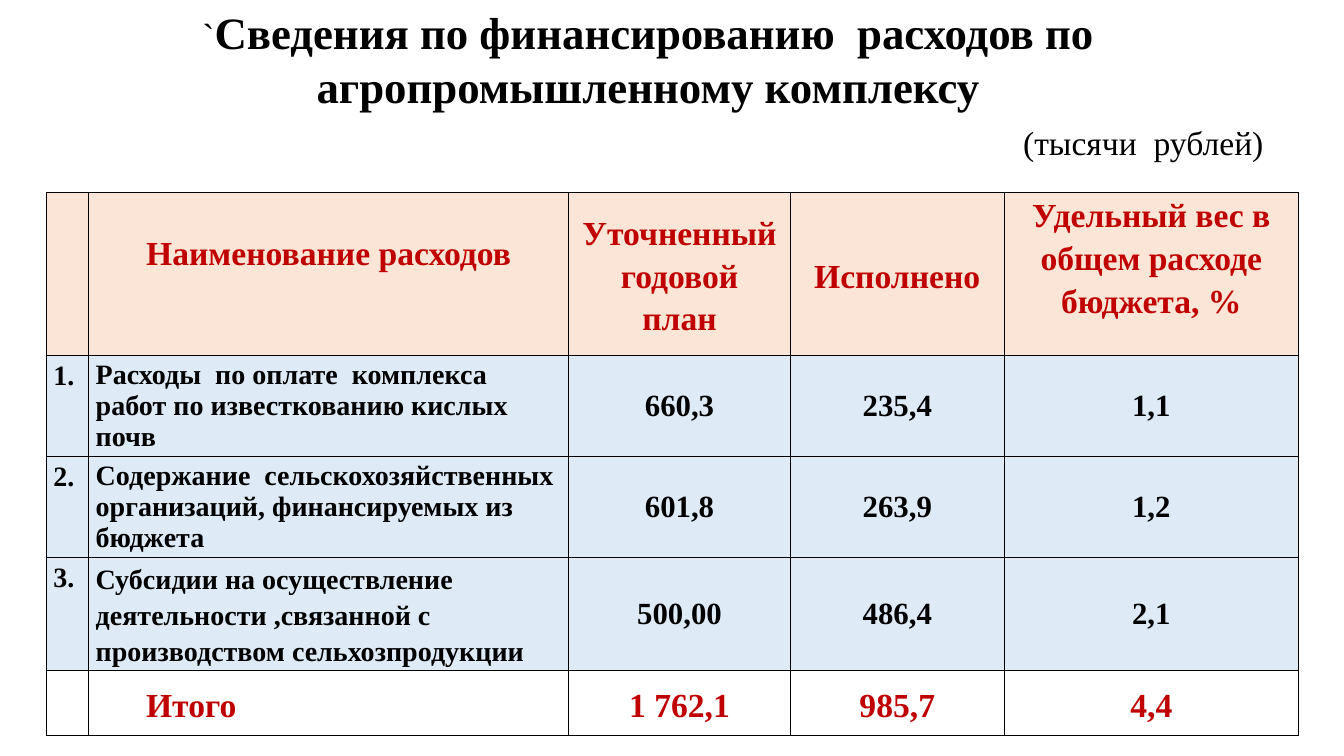
"""Builds the slide on spending for the agro-industrial complex."""
from dataclasses import dataclass

from lxml import etree
from pptx import Presentation
from pptx.dml.color import RGBColor
from pptx.enum.text import MSO_ANCHOR, MSO_AUTO_SIZE, PP_ALIGN
from pptx.oxml.ns import qn
from pptx.util import Emu, Pt

LEFT, CENTER = PP_ALIGN.LEFT, PP_ALIGN.CENTER
TOP, MIDDLE = MSO_ANCHOR.TOP, MSO_ANCHOR.MIDDLE
FIXED = MSO_AUTO_SIZE.NONE
FONT = "Times New Roman"
BLACK, RED = "000000", "C00000"
PEACH, PALE_BLUE, WHITE = "FBE5D6", "DEEBF7", "FFFFFF"
EMU_PER_PX = 9144
COLUMNS = (42, 476, 220, 212, 292)
ROWS = (162, 100, 100, 112, 65)


@dataclass(frozen=True)
class Style:
    size: int
    color: str = BLACK
    bold: bool = True
    align: PP_ALIGN = CENTER
    spacing: float = 1.0
    anchor: MSO_ANCHOR = MIDDLE
    top: int = 0
    indent: int = 0


@dataclass(frozen=True)
class Entry:
    text: str
    style: Style


@dataclass(frozen=True)
class TableRow:
    fill: str
    entries: tuple[Entry, ...]


HEADER = Style(24, RED, spacing=1.15)
HEADER_TOP = Style(24, RED, spacing=1.15, anchor=TOP)
HEADER_LOWERED = Style(24, RED, spacing=1.15, anchor=TOP, top=37)
NUMBER = Style(20, align=LEFT, spacing=1.15, anchor=TOP)
NAME = Style(20, align=LEFT)
NAME_LOOSE = Style(20, align=LEFT, spacing=1.15)
VALUE = Style(22)
TOTAL_NAME = Style(24, RED, align=LEFT, spacing=1.15, indent=50)
TITLE = Style(32, anchor=TOP)
TITLE_MARK = Style(26, bold=False)
CAPTION = Style(24, bold=False, anchor=TOP)


def expense_row(number: str, name: Entry, values: tuple[str, ...]) -> TableRow:
    """Describe one numbered line of spending."""
    figures = (Entry(value, VALUE) for value in values)
    return TableRow(PALE_BLUE, (Entry(number, NUMBER), name, *figures))


TABLE_ROWS = (
    TableRow(PEACH, (
        Entry("", HEADER),
        Entry("Наименование расходов", HEADER_LOWERED),
        Entry("Уточненный годовой\nплан", HEADER),
        Entry("Исполнено", HEADER),
        Entry("Удельный вес в общем расходе бюджета, %", HEADER_TOP),
    )),
    expense_row("1.", Entry("Расходы  по оплате  комплекса работ по известкованию кислых почв", NAME),
                ("660,3", "235,4", "1,1")),
    expense_row("2.", Entry("Содержание  сельскохозяйственных организаций, финансируемых из бюджета", NAME),
                ("601,8", "263,9", "1,2")),
    expense_row("3.", Entry("Субсидии на осуществление деятельности ,связанной с производством сельхозпродукции",
                            NAME_LOOSE),
                ("500,00", "486,4", "2,1")),
    TableRow(WHITE, (
        Entry("", HEADER),
        Entry("Итого", TOTAL_NAME),
        *(Entry(value, HEADER) for value in ("1 762,1", "985,7", "4,4")),
    )),
)


def px(length: int) -> Emu:
    """Turn px into EMU."""
    return Emu(length * EMU_PER_PX)


def rgb(color: str) -> RGBColor:
    """Turn a hex string into a colour."""
    return RGBColor.from_string(color)


def apply(target: object, values: dict[str, object]) -> None:
    """Set each named attribute on the target."""
    for name, value in values.items():
        setattr(target, name, value)


def format_font(font: object, style: Style) -> None:
    """Give a font the look of a style."""
    apply(font, {"name": FONT, "size": Pt(style.size), "bold": style.bold})
    font.color.rgb = rgb(style.color)


def write(frame: object, entry: Entry) -> None:
    """Write an entry into a text frame and format its paragraphs."""
    frame.text = entry.text
    style = entry.style
    for para in frame.paragraphs:
        apply(para, {"alignment": style.align, "line_spacing": style.spacing})
        if style.indent:
            para._p.get_or_add_pPr().set("marL", str(px(style.indent)))
        format_font(para.font, style)
        for span in para.runs:
            format_font(span.font, style)


def add_borders(cell: object) -> None:
    """Draw a thin black line on each side of a cell."""
    properties = cell._tc.get_or_add_tcPr()
    for side in ("a:lnL", "a:lnR", "a:lnT", "a:lnB"):
        line = etree.SubElement(properties, qn(side), w=str(Pt(1)))
        fill = etree.SubElement(line, qn("a:solidFill"))
        etree.SubElement(fill, qn("a:srgbClr"), val=BLACK)


def fill_cell(cell: object, entry: Entry, fill: str) -> None:
    """Write one table cell with its margins, borders and fill."""
    write(cell.text_frame, entry)
    apply(cell, {
        "vertical_anchor": entry.style.anchor,
        "margin_left": px(7),
        "margin_right": px(7),
        "margin_top": px(entry.style.top),
        "margin_bottom": 0,
    })
    add_borders(cell)
    cell.fill.solid()
    cell.fill.fore_color.rgb = rgb(fill)


def add_expense_table(page: object) -> None:
    """Add the table of spending."""
    table = page.shapes.add_table(len(ROWS), len(COLUMNS), px(46), px(191),
                                  px(sum(COLUMNS)), px(sum(ROWS))).table
    for column, width in zip(table.columns, COLUMNS):
        column.width = px(width)
    for row, height, content in zip(table.rows, ROWS, TABLE_ROWS):
        row.height = px(height)
        for cell, entry in zip(row.cells, content.entries):
            fill_cell(cell, entry, content.fill)


def add_title(page: object) -> None:
    """Fill and place the title placeholder."""
    title = page.shapes.title
    apply(title, {"left": px(31), "top": 0, "width": px(1224), "height": px(333)})
    frame = title.text_frame
    apply(frame, {"word_wrap": True, "auto_size": FIXED, "vertical_anchor": TOP})
    write(frame, Entry("`", TITLE_MARK))
    para = frame.paragraphs[0]
    for index, line in enumerate(("Сведения по финансированию  расходов по", "агропромышленному комплексу")):
        if index:
            para.add_line_break()
        span = para.add_run()
        span.text = line
        format_font(span.font, TITLE)


def add_caption(page: object) -> None:
    """Add the note on the unit of measure."""
    frame = page.shapes.add_textbox(px(1004), px(116), px(260), px(50)).text_frame
    apply(frame, {"word_wrap": True, "margin_left": 0, "margin_right": 0})
    write(frame, Entry("(тысячи  рублей)", CAPTION))


def main() -> None:
    """Build and save the deck."""
    deck = Presentation()
    apply(deck, {"slide_width": px(1333), "slide_height": px(750)})
    page = deck.slides.add_slide(deck.slide_layouts[5])
    add_title(page)
    add_expense_table(page)
    add_caption(page)
    deck.save("out.pptx")


if __name__ == "__main__":
    main()
